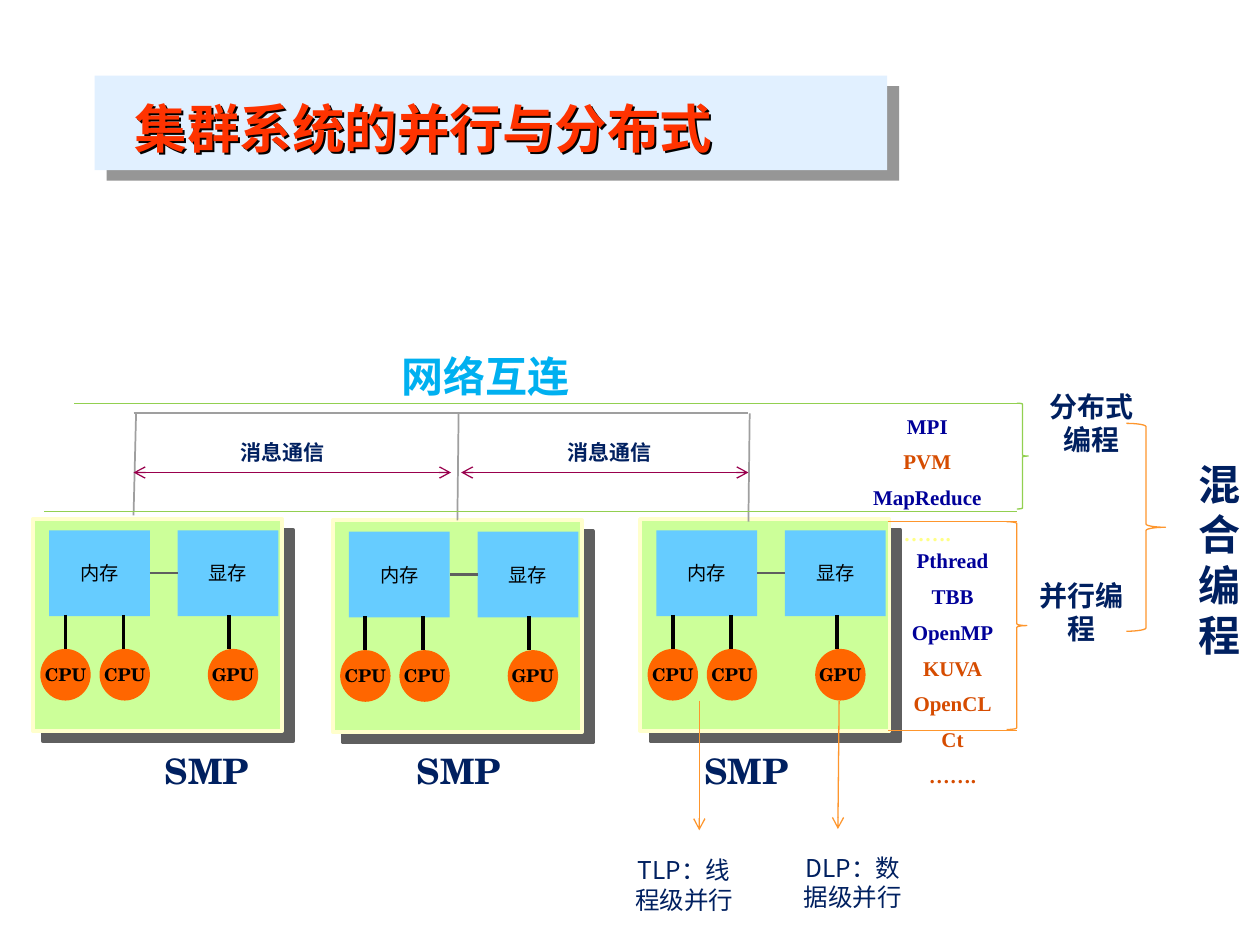
from dataclasses import dataclass

from lxml import etree
from pptx import Presentation
from pptx.dml.color import RGBColor
from pptx.enum import shapes, text
from pptx.oxml import ns
from pptx.util import Inches, Pt


@dataclass(frozen=True)
class Theme:
    sans: str = "Noto Sans CJK SC"
    serif: str = "Times New Roman"
    school: str = "TeX Gyre Schola"
    black: str = "000000"
    navy: str = "002060"
    blue: str = "000099"
    rust: str = "D64C00"
    pale: str = "FFFF87"
    sky: str = "00B0F0"
    red: str = "FF3300"
    bar: str = "E1F0FF"
    bar_shade: str = "969696"
    box: str = "CCFF99"
    rim: str = "FFFFCC"
    shade: str = "5F5F5F"
    store: str = "66CCFF"
    chip: str = "FF6600"
    gray: str = "9F9F9F"
    plum: str = "99004D"
    amber: str = "FE962D"
    green: str = "92D050"
    title: int = 30
    large: int = 24
    node: int = 20
    model: int = 16
    level: int = 14
    body: int = 12
    small: int = 11
    tiny: int = 10


T = Theme()


@dataclass(frozen=True)
class Face:
    size: int
    font: str
    color: str = T.navy
    bold: bool = True


@dataclass(frozen=True)
class Label:
    words: tuple
    area: tuple
    face: Face
    wrap: bool = True


@dataclass(frozen=True)
class Wire:
    start: tuple
    end: tuple
    color: str
    width: float = 0.75
    ends: tuple = ()


@dataclass(frozen=True)
class Brace:
    area: tuple
    color: str


@dataclass(frozen=True)
class Node:
    left: float
    top: float
    name_left: float


STORE = Face(T.small, T.school, T.black, False)
CHIP = Face(T.tiny, T.school, T.black)
NAME = Face(T.node, T.school)
NOTE = Face(T.body, T.serif)
MODEL = Face(T.model, T.serif)
LEVEL = Face(T.level, T.sans, bold=False)

NODES = (Node(0.26, 4.12, 1.21), Node(2.64, 4.13, 3.21), Node(5.08, 4.12, 5.49))
STORES = (("内存", 0.13), ("显存", 1.15))
CHIPS = (("CPU", 0.06, 0.26), ("CPU", 0.53, 0.72), ("GPU", 1.39, 1.56))
BOTH = ("headEnd", "tailEnd")

WIRES = (
    Wire((1.06, 4.09), (1.08, 3.28), T.gray, 1),
    Wire((3.63, 4.13), (3.64, 3.28), T.gray, 1),
    Wire((5.94, 4.14), (5.95, 3.28), T.gray, 1),
    Wire((1.06, 3.28), (5.94, 3.28), T.gray, 1),
    Wire((1.06, 3.75), (3.58, 3.75), T.plum, ends=BOTH),
    Wire((3.66, 3.75), (5.94, 3.75), T.plum, ends=BOTH),
    Wire((7.05, 5.8), (8.07, 5.8), T.amber),
    Wire((7.05, 4.14), (8.07, 4.14), T.amber),
    Wire((5.55, 5.56), (5.55, 6.59), T.amber, ends=("tailEnd",)),
    Wire((6.66, 5.56), (6.65, 6.58), T.amber, ends=("tailEnd",)),
    Wire((0.59, 3.2), (8.07, 3.2), T.green),
    Wire((0.35, 4.06), (8.07, 4.06), T.green),
)

BRACES = (
    Brace((7.99, 4.14, 0.16, 1.65), T.amber),
    Brace((8.07, 3.2, 0.09, 0.84), T.green),
    Brace((8.94, 3.36, 0.31, 1.65), T.amber),
)

LABELS = (
    Label((("网络互连", T.sky),), (2.95, 2.73, 1.81, 0.5), Face(T.large, T.sans)),
    Label((("消息通信", T.navy),), (1.77, 3.44, 0.94, 0.3), NOTE),
    Label((("消息通信", T.navy),), (4.37, 3.44, 0.94, 0.3), NOTE),
    Label((("并行编程", T.navy),), (8.15, 4.54, 0.87, 0.64), MODEL),
    Label((("分布式编程", T.navy),), (8.23, 3.04, 0.87, 0.91), MODEL),
    Label((("TLP：线程级并行", T.navy),), (4.92, 6.74, 1.02, 0.57), LEVEL),
    Label((("DLP：数据级并行", T.navy),), (6.26, 6.72, 1.02, 0.57), LEVEL),
    Label((("Pthread", T.blue), ("TBB", T.blue), ("OpenMP", T.blue), ("KUVA", T.rust),
           ("OpenCL", T.rust), ("Ct", T.rust), ("…….", T.rust)),
          (7.05, 4.3, 1.02, 2.12), NOTE),
    Label((("MPI", T.blue), ("PVM", T.rust), ("MapReduce", T.blue), ("…….", T.pale)),
          (6.73, 3.23, 1.26, 1.21), NOTE),
    Label((("混合编程", T.navy),), (9.41, 3.59, 0.39, 1.72), Face(T.large, T.sans)),
)


def put(item, vals: dict) -> None:
    for key, val in vals.items():
        setattr(item, key, val)


def scale(area: tuple) -> list:
    return [Inches(n) for n in area]


def child(root, tag: str, **vals):
    return etree.SubElement(root, ns.qn(f"a:{tag}"), **vals)


def shade(shape, color: str, dist: float, angle: int) -> None:
    shape.shadow.inherit = False
    cast = child(shape._element.spPr.find(ns.qn("a:effectLst")), "outerShdw", blurRad="0",
                 dist=str(Pt(dist)), dir=str(angle * 60000), algn="ctr", rotWithShape="0")
    child(cast, "srgbClr", val=color)


def write(frame, words: tuple, face: Face, align=text.PP_ALIGN.CENTER) -> None:
    for i, (word, color) in enumerate(words):
        para = frame.paragraphs[0] if i == 0 else frame.add_paragraph()
        para.alignment = align
        gap = child(para._p.get_or_add_pPr(), "spcBef")
        child(gap, "spcPct", val="50000")
        run = para.add_run()
        run.text = word
        put(run.font, {"size": Pt(face.size), "name": face.font, "bold": face.bold})
        run.font.color.rgb = RGBColor.from_string(color)
        child(run._r.get_or_add_rPr(), "ea", typeface=T.sans)


def draw_shape(slide, kind, area: tuple, fill: str = "", line: str = "", width: float = 0.75):
    shape = slide.shapes.add_shape(kind, *scale(area))
    shape.shadow.inherit = False
    if fill:
        shape.fill.solid()
        shape.fill.fore_color.rgb = RGBColor.from_string(fill)
    else:
        shape.fill.background()
    if line:
        shape.line.color.rgb = RGBColor.from_string(line)
        shape.line.width = Pt(width)
    else:
        shape.line.fill.background()
    return shape


def draw_part(slide, kind, area: tuple, fill: str, word: str, face: Face) -> None:
    frame = draw_shape(slide, kind, area, fill).text_frame
    put(frame, {"word_wrap": False, "vertical_anchor": text.MSO_ANCHOR.MIDDLE})
    write(frame, ((word, face.color),), face)


def draw_label(slide, label: Label) -> None:
    frame = slide.shapes.add_textbox(*scale(label.area)).text_frame
    put(frame, {"word_wrap": label.wrap, "auto_size": text.MSO_AUTO_SIZE.SHAPE_TO_FIT_TEXT})
    write(frame, label.words, label.face)


def draw_wire(slide, wire: Wire) -> None:
    line = slide.shapes.add_connector(shapes.MSO_CONNECTOR.STRAIGHT, *scale(wire.start + wire.end))
    line.line.color.rgb = RGBColor.from_string(wire.color)
    line.line.width = Pt(wire.width)
    for end in wire.ends:
        child(line.line._get_or_add_ln(), end, type="arrow")
    child(line._element.spPr, "effectLst")


def draw_node(slide, node: Node) -> None:
    x, y = node.left, node.top
    kinds = shapes.MSO_SHAPE
    box = draw_shape(slide, kinds.RECTANGLE, (x, y, 1.98, 1.68), T.box, T.rim, 2.25)
    shade(box, T.shade, 8.5, 45)
    for word, dx in STORES:
        draw_part(slide, kinds.RECTANGLE, (x + dx, y + 0.09, 0.8, 0.68), T.store, word, STORE)
    for word, dx, stem in CHIPS:
        draw_part(slide, kinds.OVAL, (x + dx, y + 1.03, 0.4, 0.41), T.chip, word, CHIP)
        draw_wire(slide, Wire((x + stem, y + 0.76), (x + stem, y + 1.03), T.black, 2.25))
    draw_wire(slide, Wire((x + 0.93, y + 0.43), (x + 1.15, y + 0.43), T.shade, 1.25))
    draw_label(slide, Label((("SMP", T.navy),), (node.name_left, 5.9, 0.87, 0.44), NAME, False))


def draw_title(slide) -> None:
    bar = draw_shape(slide, shapes.MSO_SHAPE.RECTANGLE, (0.75, 0.6, 6.29, 0.75), T.bar)
    shade(bar, T.bar_shade, 9.2, 41)
    title = slide.shapes.title
    title._element.addprevious(bar._element)
    put(title, dict(zip(("left", "top", "width", "height"), scale((0.97, 0.71, 6.31, 0.61)))))
    title.fill.background()
    shade(title, T.black, 1.6, 45)
    frame = title.text_frame
    put(frame, {"word_wrap": True, "vertical_anchor": text.MSO_ANCHOR.TOP,
                "auto_size": text.MSO_AUTO_SIZE.NONE})
    write(frame, (("集群系统的并行与分布式", T.red),), Face(T.title, T.sans), text.PP_ALIGN.LEFT)


def main() -> None:
    deck = Presentation()
    put(deck, {"slide_width": Inches(10), "slide_height": Inches(7.5)})
    slide = deck.slides.add_slide(deck.slide_layouts[5])
    draw_title(slide)
    for node in NODES:
        draw_node(slide, node)
    for wire in WIRES:
        draw_wire(slide, wire)
    for brace in BRACES:
        draw_shape(slide, shapes.MSO_SHAPE.RIGHT_BRACE, brace.area, line=brace.color)
    for label in LABELS:
        draw_label(slide, label)
    deck.save("out.pptx")


if __name__ == "__main__":
    main()
